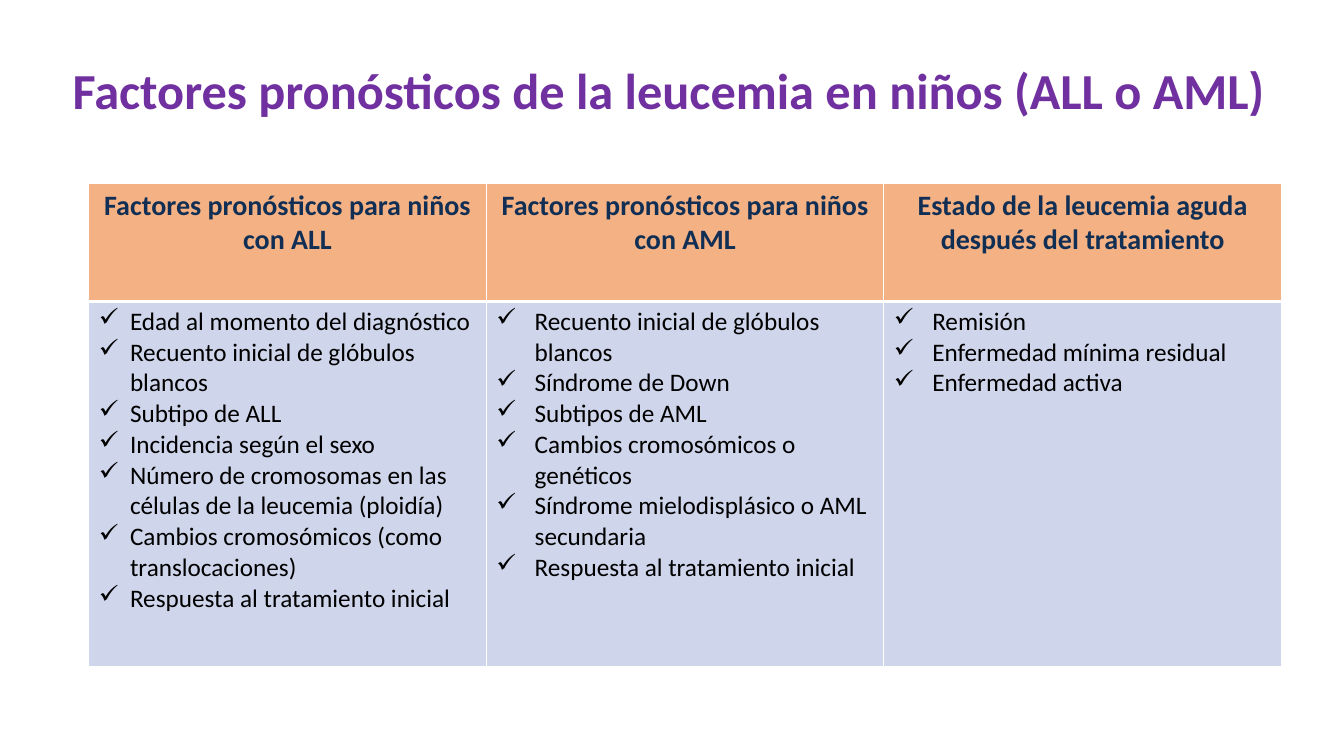
from lxml.etree import SubElement
from pptx import Presentation
from pptx.dml.color import RGBColor
from pptx.enum.text import MSO_ANCHOR as Anchor, MSO_AUTO_SIZE as AutoSize, PP_ALIGN as Align
from pptx.oxml.ns import qn
from pptx.util import Inches, Pt

FACTORS = [
    ("Factores pronósticos para niños con ALL", 0.31, [
        "Edad al momento del diagnóstico",
        "Recuento inicial de glóbulos blancos",
        "Subtipo de ALL",
        "Incidencia según el sexo",
        "Número de cromosomas en las células de la leucemia (ploidía)",
        "Cambios cromosómicos (como translocaciones)",
        "Respuesta al tratamiento inicial",
    ]),
    ("Factores pronósticos para niños con AML", 0.38, [
        "Recuento inicial de glóbulos blancos",
        "Síndrome de Down",
        "Subtipos de AML",
        "Cambios cromosómicos o genéticos",
        "Síndrome mielodisplásico o AML secundaria",
        "Respuesta al tratamiento inicial",
    ]),
    ("Estado de la leucemia aguda después del tratamiento", 0.38, [
        "Remisión",
        "Enfermedad mínima residual",
        "Enfermedad activa",
    ]),
]


def rgb(value):
    return RGBColor.from_string(value)


def write(paragraph, text, size=18, color="000000", bold=False, font="Calibri", align=Align.LEFT):
    paragraph.alignment = align
    run = paragraph.add_run()
    run.text = text
    run.font.size = Pt(size)
    run.font.bold = bold
    run.font.name = font
    run.font.color.rgb = rgb(color)


def add_check(paragraph, indent):
    props = paragraph._p.get_or_add_pPr()
    props.set("marL", str(Inches(indent)))
    props.set("indent", str(-Inches(indent)))
    SubElement(props, qn("a:buChar"), char="✓")


class FactorSlide:
    purple, navy, orange, lilac, white = "7030A0", "112F54", "F4B183", "CFD5EA", "FFFFFF"

    def __init__(self, deck):
        self.width, self.height = deck.slide_width, deck.slide_height
        self.slide = deck.slides.add_slide(deck.slide_layouts[5])

    def area(self, left, top, width, height):
        return (int(left * self.width / 100), int(top * self.height / 100),
                int(width * self.width / 100), int(height * self.height / 100))

    def title(self, parts, *share):
        heading = self.slide.shapes.title
        heading.left, heading.top, heading.width, heading.height = self.area(*share)
        frame = heading.text_frame
        frame.word_wrap = False
        frame.auto_size = AutoSize.SHAPE_TO_FIT_TEXT
        frame.vertical_anchor = Anchor.TOP
        for text, font in parts:
            write(frame.paragraphs[0], text, size=36, color=self.purple, bold=True, font=font)

    def style_cell(self, cell, fill, top, bottom):
        props = cell._tc.get_or_add_tcPr()
        for side, points in (("L", 1), ("R", 1), ("T", top), ("B", bottom)):
            border = SubElement(props, qn(f"a:ln{side}"), w=str(Pt(points)))
            SubElement(SubElement(border, qn("a:solidFill")), qn("a:srgbClr"), val=self.white)
        cell.fill.solid()
        cell.fill.fore_color.rgb = rgb(fill)

    def table(self, columns, header_share, *share):
        grid = self.slide.shapes.add_table(2, len(columns), *self.area(*share)).table
        grid.horz_banding = False
        header_height = int(header_share * self.height / 100)
        grid.rows[1].height = grid.rows[0].height + grid.rows[1].height - header_height
        grid.rows[0].height = header_height
        for index, (heading, indent, factors) in enumerate(columns):
            header, body = grid.cell(0, index), grid.cell(1, index)
            self.style_cell(header, self.orange, top=1, bottom=3)
            self.style_cell(body, self.lilac, top=3, bottom=1)
            write(header.text_frame.paragraphs[0], heading, size=20, color=self.navy,
                  bold=True, align=Align.CENTER)
            for number, factor in enumerate(factors):
                frame = body.text_frame
                line = frame.add_paragraph() if number else frame.paragraphs[0]
                add_check(line, indent)
                write(line, factor)


def main():
    deck = Presentation()
    deck.slide_width, deck.slide_height = Inches(13.33), Inches(7.5)
    page = FactorSlide(deck)
    page.title([("Factores pronósticos de la leucemia en niños (ALL o AML", "Calibri"), (")", "Cabin")],
               4.65, 7.2, 90.77, 9.47)
    page.table(FACTORS, 15.6, 6.6, 24.27, 88.75, 63.87)
    deck.save("out.pptx")


if __name__ == "__main__":
    main()
